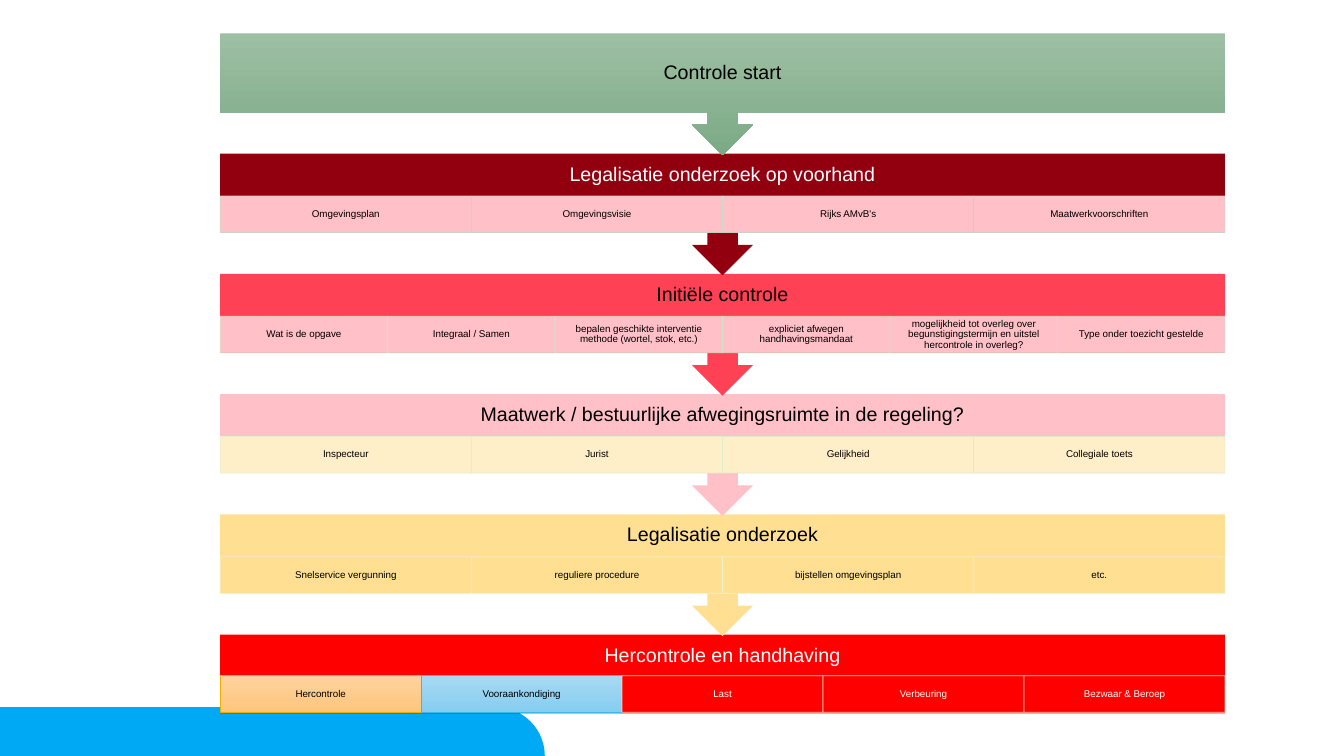
from dataclasses import dataclass
from math import cos, pi, sin

from lxml.etree import SubElement
from pptx import Presentation
from pptx.dml.color import RGBColor
from pptx.enum.shapes import MSO_SHAPE
from pptx.enum.text import MSO_ANCHOR, PP_ALIGN
from pptx.oxml.ns import qn
from pptx.shapes.autoshape import Shape
from pptx.slide import Slide
from pptx.util import Cm, Pt


@dataclass(frozen=True)
class Theme:
    font: str = "Arial"
    head: int = 14
    small: int = 7
    black: str = "000000"
    white: str = "FFFFFF"
    blue: str = "00A9F3"
    red: str = "FF0000"
    wine: str = "920010"
    coral: str = "FF4156"
    pink: str = "FFC0C7"
    sand: str = "FFE093"
    cream: str = "FFEFC9"
    green: tuple[str, str] = ("9DBFA4", "7CAA85")
    peach: tuple[str, str] = ("FFD39E", "FDC57C")
    sky: tuple[str, str] = ("A7D9F2", "86CDF0")


Paint = str | tuple[str, str]
theme = Theme()


@dataclass(frozen=True)
class Cell:
    text: str
    line: str
    fill: Paint
    ink: str = theme.black
    alpha: int = 90


@dataclass(frozen=True)
class Step:
    title: str
    fill: Paint
    ink: str = theme.black
    cells: tuple[Cell, ...] = ()


STEPS = (
    Step("Controle start", theme.green),
    Step("Legalisatie onderzoek op voorhand", theme.wine, theme.white, (
        Cell("Omgevingsplan", "CCDFCB", theme.pink),
        Cell("Omgevingsvisie", "CBDDCC", theme.pink),
        Cell("Rijks AMvB's", "CCDBCD", theme.pink),
        Cell("Maatwerkvoorschriften", "CCD9CF", theme.pink),
    )),
    Step("Initiële controle", theme.coral, cells=(
        Cell("Wat is de opgave", "D9E9CA", theme.pink),
        Cell("Integraal / Samen", "D6E7CA", theme.pink),
        Cell("bepalen geschikte interventie methode (wortel, stok, etc.)", "D4E6CA", theme.pink),
        Cell("expliciet afwegen handhavingsmandaat", "D1E4CA", theme.pink),
        Cell("mogelijkheid tot overleg over begunstigingstermijn en uitstel "
             "hercontrole in overleg?", "CFE2CA", theme.pink),
        Cell("Type onder toezicht gestelde", "CDE1CA", theme.pink),
    )),
    Step("Maatwerk / bestuurlijke afwegingsruimte in de regeling?", theme.pink, cells=(
        Cell("Inspecteur", "E8EFCA", theme.cream),
        Cell("Jurist", "E4EDCA", theme.cream),
        Cell("Gelijkheid", "E0ECCA", theme.cream),
        Cell("Collegiale toets", "DDEACA", theme.cream),
    )),
    Step("Legalisatie onderzoek", theme.sand, cells=(
        Cell("Snelservice vergunning", "F4EFCA", theme.sand),
        Cell("reguliere procedure", "F2F1CA", theme.sand),
        Cell("bijstellen omgevingsplan", "F0F1CA", theme.sand),
        Cell("etc.", "ECF0CA", theme.sand),
    )),
    Step("Hercontrole en handhaving", theme.red, theme.white, (
        Cell("Hercontrole", "F0AB00", theme.peach, alpha=100),
        Cell("Vooraankondiging", "3DB7E4", theme.sky, alpha=100),
        Cell("Last", "F7E8CB", theme.red, theme.white),
        Cell("Verbeuring", "F6EACB", theme.red, theme.white),
        Cell("Bezwaar & Beroep", "F5ECCB", theme.red, theme.white),
    )),
)
LEFT, TOP, WIDTH, PITCH = 5.55, 0.84, 25.32, 3.03
ARROW, BODY, TITLE, CELL = 3.07, 1.99, 1.07, 0.92


def paint(shape: Shape, fill: Paint) -> None:
    """Fill plainly, or from top to bottom when given two colours."""
    shape.shadow.inherit = False
    shape.line.fill.background()
    if isinstance(fill, str):
        shape.fill.solid()
        shape.fill.fore_color.rgb = RGBColor.from_string(fill)
        return
    shape.fill.gradient()
    shape.fill.gradient_angle = 270
    for stop, tone in zip(shape.fill.gradient_stops, fill):
        stop.color.rgb = RGBColor.from_string(tone)


def edge(shape: Shape, cell: Cell) -> None:
    shape.line.width = Pt(0.5)
    shape.line.color.rgb = RGBColor.from_string(cell.line)
    if cell.alpha < 100:
        tone = next(shape.line._get_or_add_ln().iter(qn("a:srgbClr")))
        SubElement(tone, qn("a:alpha")).set("val", str(cell.alpha * 1000))


def write(shape: Shape, text: str, size: int, ink: str,
          side: float, top: float, low: float) -> None:
    frame = shape.text_frame
    frame.word_wrap = True
    frame.vertical_anchor = MSO_ANCHOR.MIDDLE
    frame.margin_left = frame.margin_right = Cm(side)
    frame.margin_top, frame.margin_bottom = Cm(top), Cm(low)
    frame.text = text
    line = frame.paragraphs[0]
    line.alignment = PP_ALIGN.CENTER
    line.line_spacing = 0.9
    line.font.name = theme.font
    line.font.size = Pt(size)
    line.font.color.rgb = RGBColor.from_string(ink)


def wave(slide: Slide, left: float) -> None:
    """Draw a bottom bar with a rounded top right corner."""
    width, top, base = 7.48, 17.82, 19.05
    turn = base - top
    curve = [(left + width - turn + turn * sin(a), base - turn * cos(a))
             for a in (pi / 2 * i / 24 for i in range(25))]
    pen = slide.shapes.build_freeform(Cm(left), Cm(base))
    pen.add_line_segments([(Cm(x), Cm(y)) for x, y in [(left, top), *curve]])
    paint(pen.convert_to_shape(), theme.blue)


def draw(slide: Slide, step: Step, top: float, last: bool) -> None:
    kind = MSO_SHAPE.RECTANGLE if last else MSO_SHAPE.DOWN_ARROW_CALLOUT
    block = slide.shapes.add_shape(
        kind, Cm(LEFT), Cm(top), Cm(WIDTH), Cm(BODY if last else ARROW))
    paint(block, step.fill)
    low = 0.28 + (BODY - TITLE if step.cells else 0)
    write(block, step.title, theme.head, step.ink, 0.28, 0.28, low)
    for i, cell in enumerate(step.cells):
        wide = WIDTH / len(step.cells)
        box = slide.shapes.add_shape(
            MSO_SHAPE.RECTANGLE, Cm(LEFT + i * wide),
            Cm(top + (1.04 if last else TITLE)), Cm(wide), Cm(CELL))
        paint(box, cell.fill)
        edge(box, cell)
        write(box, cell.text, theme.small, cell.ink, 0.13, 0.03, 0.03)


def main() -> None:
    deck = Presentation()
    deck.slide_width, deck.slide_height = Cm(33.87), Cm(19.05)
    slide = deck.slides.add_slide(deck.slide_layouts[6])
    for left in (0, 6.25):
        wave(slide, left)
    final = len(STEPS) - 1
    for i, step in reversed(list(enumerate(STEPS))):
        draw(slide, step, TOP + i * PITCH, i == final)
    deck.save("out.pptx")


if __name__ == "__main__":
    main()
